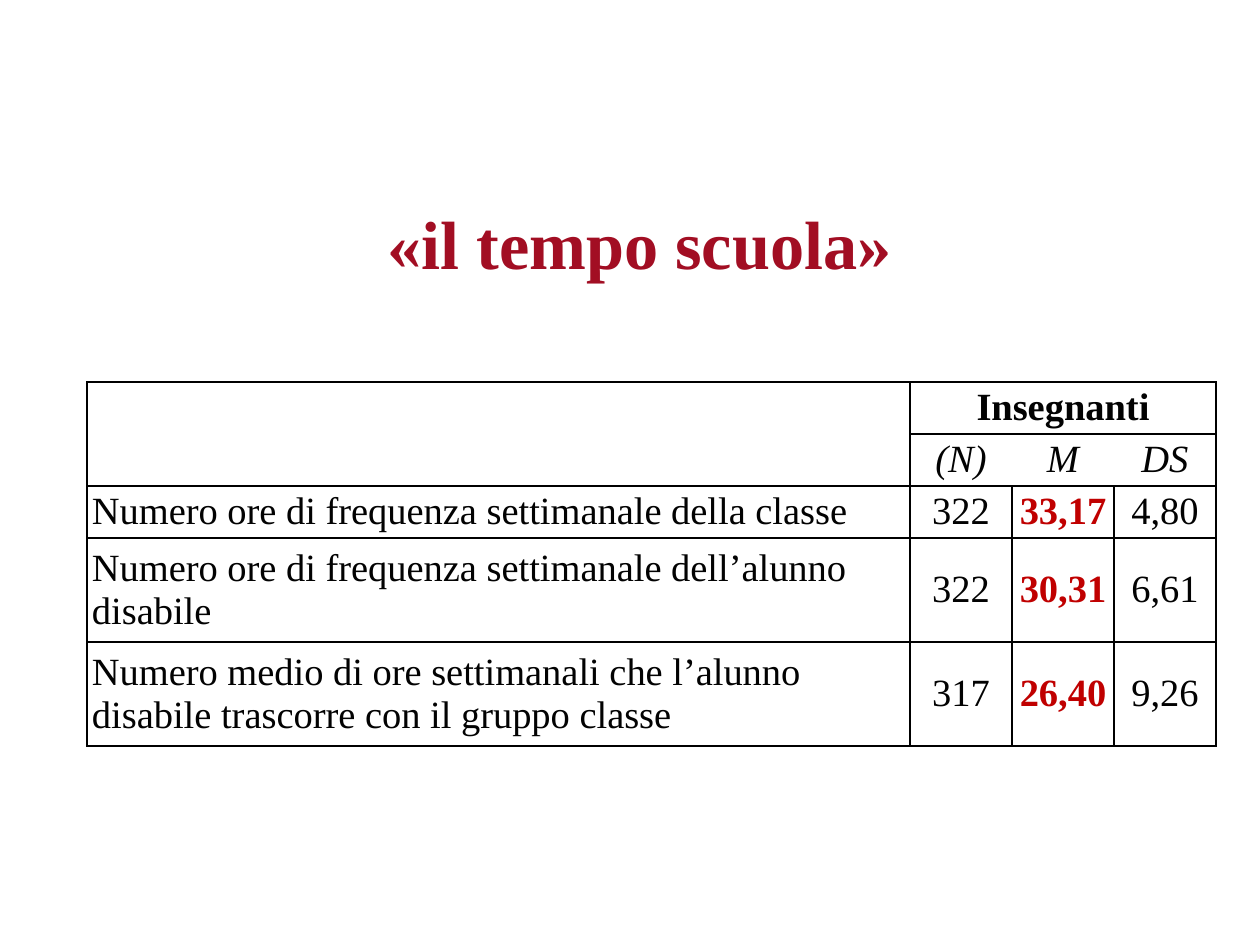
import dataclasses

import lxml.etree
import pptx
import pptx.dml.color
import pptx.enum.text
import pptx.oxml.ns
import pptx.util

EMU_PER_PX = 914400 / 126
CENTER = pptx.enum.text.PP_ALIGN.CENTER
LEFT = pptx.enum.text.PP_ALIGN.LEFT
MIDDLE = pptx.enum.text.MSO_ANCHOR.MIDDLE


@dataclasses.dataclass(frozen=True)
class Theme:
    font: str = "Times New Roman"
    title_size: int = 39
    table_size: int = 22
    title: str = "A20E23"
    text: str = "020202"
    mean: str = "C00000"
    border: str = "000000"


def px(length):
    return pptx.util.Emu(round(length * EMU_PER_PX))


class SlideBuilder:
    def __init__(self, slide, theme):
        self.slide = slide
        self.theme = theme

    def set_text(self, text_frame, text, size, color, align=CENTER, bold=False, italic=False):
        text_frame.text = text
        paragraph = text_frame.paragraphs[0]
        paragraph.alignment = align
        for run in paragraph.runs:
            run.font.name = self.theme.font
            run.font.size = pptx.util.Pt(size)
            run.font.bold = bold
            run.font.italic = italic
            run.font.color.rgb = pptx.dml.color.RGBColor.from_string(color)

    def add_title(self, text, left, top, width, height):
        shape = self.slide.shapes.add_textbox(px(left), px(top), px(width), px(height))
        shape.text_frame.word_wrap = True
        shape.text_frame.vertical_anchor = MIDDLE
        self.set_text(shape.text_frame, text, self.theme.title_size, self.theme.title, bold=True)

    def set_borders(self, cell, sides):
        """Draw the named sides (from "LRTB") and clear the others."""
        properties = cell._tc.get_or_add_tcPr()
        for side in "LRTB":
            line = lxml.etree.SubElement(properties, pptx.oxml.ns.qn(f"a:ln{side}"), w="12700")
            if side in sides:
                fill = lxml.etree.SubElement(line, pptx.oxml.ns.qn("a:solidFill"))
                lxml.etree.SubElement(fill, pptx.oxml.ns.qn("a:srgbClr"), val=self.theme.border)
            else:
                lxml.etree.SubElement(line, pptx.oxml.ns.qn("a:noFill"))

    def style_cell(self, cell, text, sides, **style):
        cell.margin_left = cell.margin_right = px(5)
        cell.margin_top = cell.margin_bottom = 0
        cell.vertical_anchor = MIDDLE
        self.set_borders(cell, sides)
        cell.fill.background()
        if text:
            style.setdefault("color", self.theme.text)
            self.set_text(cell.text_frame, text, self.theme.table_size, **style)

    def add_hours_table(self, rows, left, top, widths, heights):
        frame = self.slide.shapes.add_table(
            len(heights), len(widths), px(left), px(top), px(sum(widths)), px(sum(heights)))
        table = frame.table
        table.first_row = table.horz_banding = False
        for column, width in zip(table.columns, widths):
            column.width = px(width)
        for row, height in zip(table.rows, heights):
            row.height = px(height)

        open_sides = {(0, 0): "LRT", (1, 0): "LRB", (1, 1): "LTB", (1, 2): "TB", (1, 3): "RTB"}
        for row_index, values in enumerate(rows):
            for column_index, text in enumerate(values):
                style = {"bold": row_index == 0, "italic": row_index == 1}
                if row_index > 1 and column_index == 0:
                    style["align"] = LEFT
                if row_index > 1 and column_index == 2:
                    style.update(color=self.theme.mean, bold=True)
                sides = open_sides.get((row_index, column_index), "LRTB")
                self.style_cell(table.cell(row_index, column_index), text, sides, **style)
        table.cell(0, 1).merge(table.cell(0, 3))


HOURS = [
    ("", "Insegnanti", "", ""),
    ("", "(N)", "M", "DS"),
    ("Numero ore di frequenza settimanale della classe", "322", "33,17", "4,80"),
    ("Numero ore di frequenza settimanale dell’alunno disabile", "322", "30,31", "6,61"),
    ("Numero medio di ore settimanali che l’alunno disabile trascorre con il gruppo classe",
     "317", "26,40", "9,26"),
]


def main():
    presentation = pptx.Presentation()
    presentation.slide_width = px(1260)
    presentation.slide_height = px(945)
    slide = presentation.slides.add_slide(presentation.slide_layouts[6])
    builder = SlideBuilder(slide, Theme())
    builder.add_title("«il tempo scuola»", 19, 175, 1241, 135)
    builder.add_hours_table(HOURS, 87, 382, [823] + [102] * 3, [52] * 3 + [104] * 2)
    presentation.save("out.pptx")


if __name__ == "__main__":
    main()
